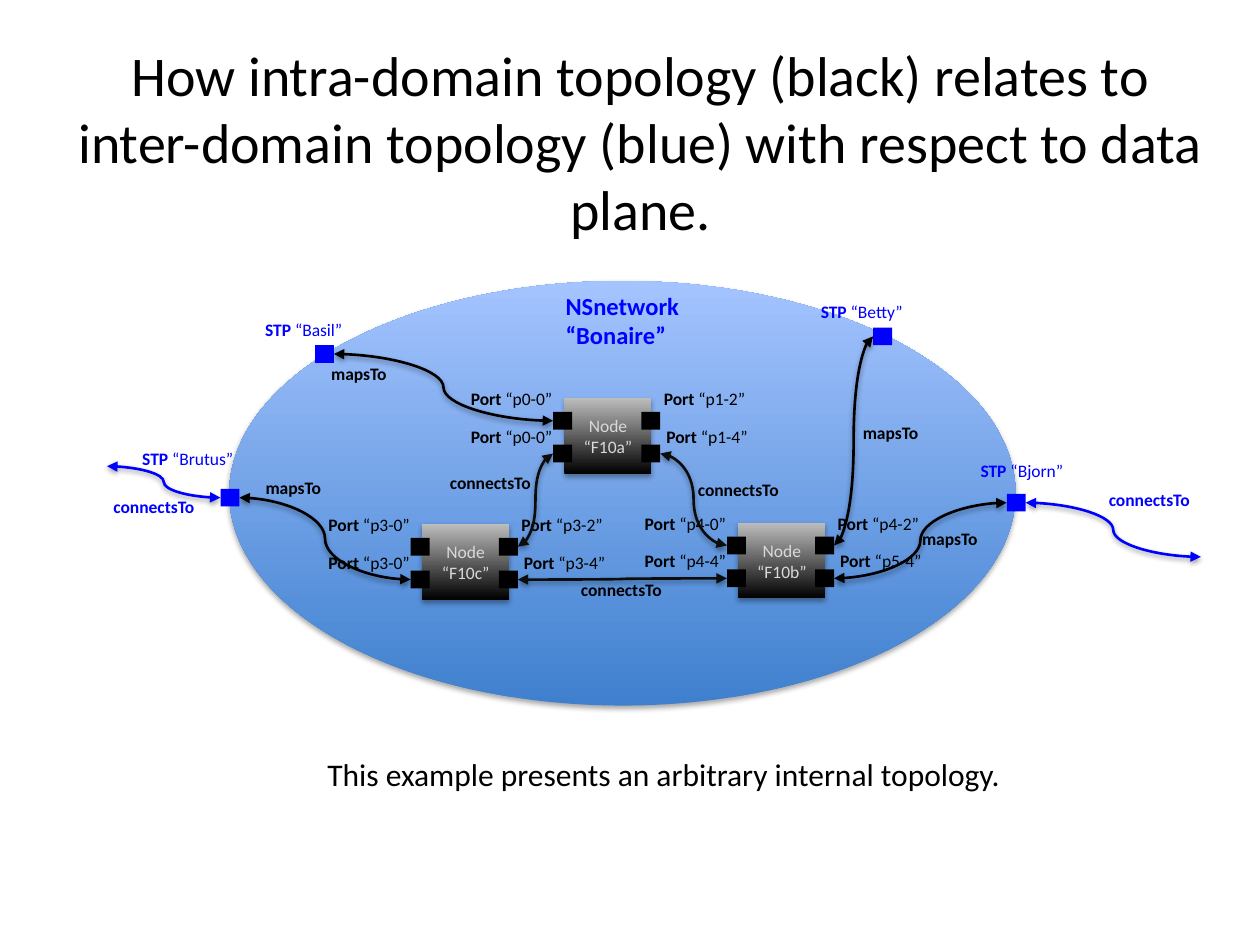
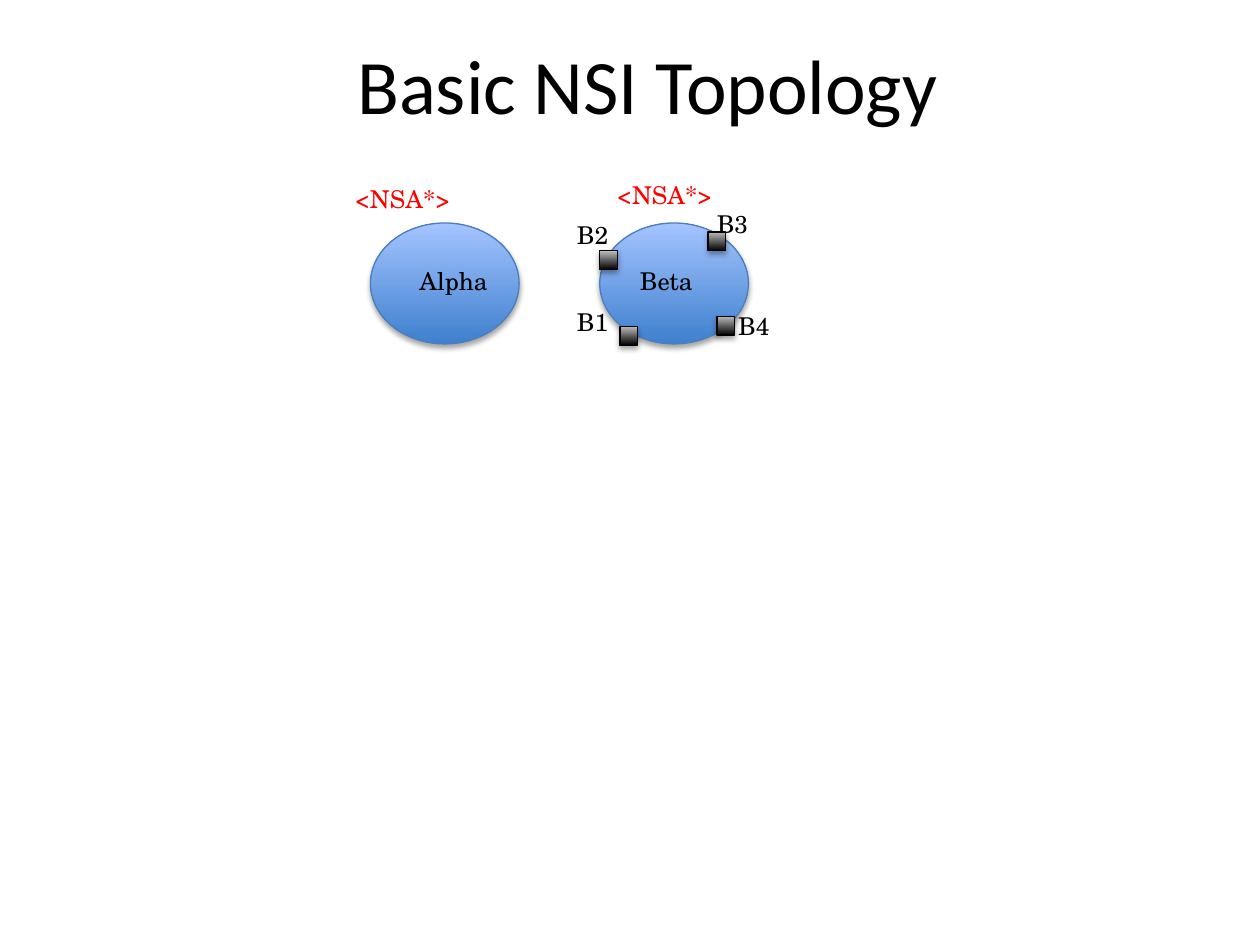
from lxml import etree
from pptx import Presentation
from pptx.dml.color import RGBColor
from pptx.enum.shapes import MSO_CONNECTOR, MSO_SHAPE
from pptx.enum.text import MSO_ANCHOR, MSO_AUTO_SIZE, PP_ALIGN
from pptx.oxml.ns import qn
from pptx.util import Inches, Pt

CURVE = MSO_CONNECTOR.CURVE
ELLIPSE, RECTANGLE = MSO_SHAPE.OVAL, MSO_SHAPE.RECTANGLE
MIDDLE, TOP = MSO_ANCHOR.MIDDLE, MSO_ANCHOR.TOP
GROW = MSO_AUTO_SIZE.SHAPE_TO_FIT_TEXT
LEFT, CENTER, RIGHT = PP_ALIGN.LEFT, PP_ALIGN.CENTER, PP_ALIGN.RIGHT

BLACK = RGBColor(0x00, 0x00, 0x00)
INK = RGBColor(0x0D, 0x0D, 0x0D)
BLUE = RGBColor(0x00, 0x00, 0xFF)
RED = RGBColor(0xFF, 0x00, 0x00)
PALE_GRAY = RGBColor(0xD9, 0xD9, 0xD9)
CLOUD_EDGE = RGBColor(0x4B, 0x7E, 0xBC)
CLOUD_FILL = (RGBColor(0x3F, 0x80, 0xCE), RGBColor(0xA4, 0xC4, 0xFF))
NODE_FILL = (BLACK, RGBColor(0xBD, 0xBD, 0xBD))

SANS, SERIF = "Calibri", "TeX Gyre Schola"
LEFT_SITE, RIGHT_SITE = 1, 3
LABEL_WIDTH, LABEL_HEIGHT = 1.04, 0.27


class TopologyDeck:
    def __init__(self):
        self.deck = Presentation()
        self.deck.slide_width = Inches(10)
        self.deck.slide_height = Inches(7.5)
        self.page = None

    def new_page(self, title, left, top, width, height, size):
        self.page = self.deck.slides.add_slide(self.deck.slide_layouts[6])
        box = self.text(left, top, width, height, title, size, align=CENTER, anchor=MIDDLE)
        box.text_frame.auto_size = MSO_AUTO_SIZE.NONE

    def style(self, frame, size, colour, font=SANS, bold=False, align=LEFT):
        for para in frame.paragraphs:
            para.alignment = align
            for span in para.runs:
                span.font.name = font
                span.font.size = Pt(size)
                span.font.bold = bold
                span.font.color.rgb = colour

    def text(self, left, top, width, height, words, size, colour=BLACK, font=SANS,
             bold=False, align=LEFT, anchor=TOP, wrap=True):
        box = self.page.shapes.add_textbox(
            Inches(left), Inches(top), Inches(width), Inches(height))
        frame = box.text_frame
        frame.text = words
        frame.word_wrap = wrap
        frame.auto_size = GROW
        frame.vertical_anchor = anchor
        self.style(frame, size, colour, font, bold, align)
        return box

    def label(self, left, top, words, name="", colour=BLACK, align=LEFT):
        box = self.text(left, top, LABEL_WIDTH, LABEL_HEIGHT, words, 10, colour,
                        bold=True, align=align)
        if name:
            span = box.text_frame.paragraphs[0].add_run()
            span.text = f"“{name}”"
            span.font.name = SANS
            span.font.size = Pt(10)
            span.font.bold = False
            span.font.color.rgb = colour

    def serif_label(self, left, top, width, words, colour=BLACK):
        self.text(left, top, width, 0.34, words, 14, colour, SERIF, wrap=False)

    def cast_shadow(self, effects, distance, opacity):
        shadow = etree.SubElement(
            effects, qn("a:outerShdw"), blurRad=str(Pt(3.1)), dist=str(Pt(distance)),
            dir="5400000", rotWithShape="0")
        tint = etree.SubElement(shadow, qn("a:srgbClr"), val=str(BLACK))
        etree.SubElement(tint, qn("a:alpha"), val=str(opacity * 1000))

    def shape(self, kind, left, top, width, height, fill, edge=None):
        shape = self.page.shapes.add_shape(
            kind, Inches(left), Inches(top), Inches(width), Inches(height))
        shape.shadow.inherit = False
        if isinstance(fill, RGBColor):
            shape.fill.solid()
            shape.fill.fore_color.rgb = fill
        else:
            shape.fill.gradient()
            shape.fill.gradient_angle = 90
            for stop, colour, position in zip(shape.fill.gradient_stops, fill, (0, 1)):
                stop.color.rgb = colour
                stop.position = position
            effects = shape._element.spPr.find(qn("a:effectLst"))
            self.cast_shadow(effects, 1.8, 35)
        if edge is None:
            shape.line.fill.background()
        else:
            shape.line.color.rgb = edge
            shape.line.width = Pt(0.75)
        return shape

    def marker(self, left, top, colour):
        return self.shape(RECTANGLE, left, top, 0.15, 0.14, colour)

    def node(self, name, left, top, port_names):
        block = self.shape(RECTANGLE, left, top, 0.69, 0.6, NODE_FILL)
        frame = block.text_frame
        frame.text = f"Node “{name}”"
        frame.word_wrap = True
        frame.vertical_anchor = MIDDLE
        self.style(frame, 10, PALE_GRAY, align=CENTER)
        slots = ((-0.09, 0.11, -1.04, -0.13, RIGHT), (-0.09, 0.37, -1.04, 0.17, RIGHT),
                 (0.61, 0.11, 0.69, -0.13, LEFT), (0.61, 0.37, 0.71, 0.17, LEFT))
        ports = []
        for port_name, (port_x, port_y, label_x, label_y, align) in zip(port_names, slots):
            ports.append(self.marker(left + port_x, top + port_y, BLACK))
            self.label(left + label_x, top + label_y, "Port ", port_name, align=align)
        return ports

    def stp(self, name, left, top, label_left, label_top):
        self.label(label_left, label_top, "STP ", name, BLUE, CENTER)
        return self.marker(left, top, BLUE)

    def curve(self, colour, begin=None, end=None, start=(0, 0), finish=(0, 0)):
        connector = self.page.shapes.add_connector(
            CURVE, *(Inches(value) for value in (*start, *finish)))
        if begin:
            connector.begin_connect(*begin)
        if end:
            connector.end_connect(*end)
        connector.line.color.rgb = colour
        connector.line.width = Pt(1.5)
        properties = connector._element.spPr
        line = properties.find(qn("a:ln"))
        for tag in ("a:headEnd", "a:tailEnd"):
            etree.SubElement(line, qn(tag), type="triangle")
        self.cast_shadow(etree.SubElement(properties, qn("a:effectLst")), 1.6, 38)


def draw_data_plane(show):
    show.new_page("How intra-domain topology (black) relates to inter-domain topology "
                  "(blue) with respect to data plane.", 0.47, 0.31, 9.23, 1.62, 32)
    show.shape(ELLIPSE, 1.82, 2.23, 6.24, 3.37, CLOUD_FILL)

    a_ports = show.node("F10a", 4.48, 3.16, ("p0-0", "p0-0", "p1-2", "p1-4"))
    c_ports = show.node("F10c", 3.35, 4.16, ("p3-0", "p3-0", "p3-2", "p3-4"))
    b_ports = show.node("F10b", 5.86, 4.15, ("p4-0", "p4-4", "p4-2", "p5-4"))
    a_left_upper, a_left_lower, _, a_right_lower = a_ports
    _, c_left_lower, c_right_upper, c_right_lower = c_ports
    b_left_upper, b_left_lower, b_right_upper, b_right_lower = b_ports

    basil = show.stp("Basil", 2.5, 2.74, 1.89, 2.48)
    brutus = show.stp("Brutus", 1.75, 3.88, 0.97, 3.51)
    betty = show.stp("Betty", 6.93, 2.6, 6.32, 2.34)
    bjorn = show.stp("Bjorn", 7.99, 3.92, 7.59, 3.6)

    for colour, begin, begin_site, end, end_site in (
        (INK, a_left_lower, LEFT_SITE, c_right_upper, RIGHT_SITE),
        (INK, b_left_lower, LEFT_SITE, c_right_lower, RIGHT_SITE),
        (INK, a_right_lower, RIGHT_SITE, b_left_upper, LEFT_SITE),
        (BLACK, c_left_lower, LEFT_SITE, brutus, RIGHT_SITE),
        (BLACK, betty, LEFT_SITE, b_right_upper, RIGHT_SITE),
        (BLACK, basil, RIGHT_SITE, a_left_upper, LEFT_SITE),
        (BLACK, bjorn, LEFT_SITE, b_right_lower, RIGHT_SITE),
    ):
        show.curve(colour, (begin, begin_site), (end, end_site))
    show.curve(BLUE, end=(brutus, LEFT_SITE), start=(0.85, 3.7))
    show.curve(BLUE, begin=(bjorn, RIGHT_SITE), finish=(9.53, 4.42))

    for left, top, colour, align in (
        (4.31, 4.55, BLACK, RIGHT), (5.44, 3.75, BLACK, LEFT), (3.27, 3.7, BLACK, RIGHT),
        (0.6, 3.89, BLUE, RIGHT), (8.5, 3.83, BLUE, RIGHT),
    ):
        show.label(left, top, "connectsTo", colour=colour, align=align)
    for left, top in ((6.75, 3.3), (2.01, 3.74), (2.53, 2.83), (7.22, 4.14)):
        show.label(left, top, "mapsTo")

    show.text(4.39, 2.26, 1.11, 0.57, "NSnetwork\n“Bonaire”", 14, BLUE,
              bold=True, wrap=False)
    show.text(2.5, 5.94, 5.64, 0.4, "This example presents an arbitrary internal topology.",
              18, wrap=False)


def draw_basic_topology(show):
    show.new_page("Basic NSI Topology", 0.64, 0.2, 9, 0.93, 44)
    for left in (2.94, 4.76):
        show.shape(ELLIPSE, left, 1.77, 1.18, 0.96, CLOUD_FILL, CLOUD_EDGE)
    for name, left, top, label_left, label_top in (
        ("B1", 4.92, 2.59, 4.48, 2.39), ("B2", 4.76, 1.99, 4.48, 1.7),
        ("B3", 5.62, 1.84, 5.59, 1.61), ("B4", 5.69, 2.51, 5.76, 2.42),
    ):
        show.shape(RECTANGLE, left, top, 0.14, 0.15, NODE_FILL, BLACK)
        show.serif_label(label_left, label_top, 0.45, name)
    show.serif_label(3.23, 2.06, 0.75, "Alpha")
    show.serif_label(4.98, 2.06, 0.64, "Beta")
    for left, top in ((2.72, 1.41), (4.8, 1.38)):
        show.serif_label(left, top, 0.96, "<NSA*>", RED)


def main():
    show = TopologyDeck()
    draw_data_plane(show)
    draw_basic_topology(show)
    show.deck.save("out.pptx")


if __name__ == "__main__":
    main()
